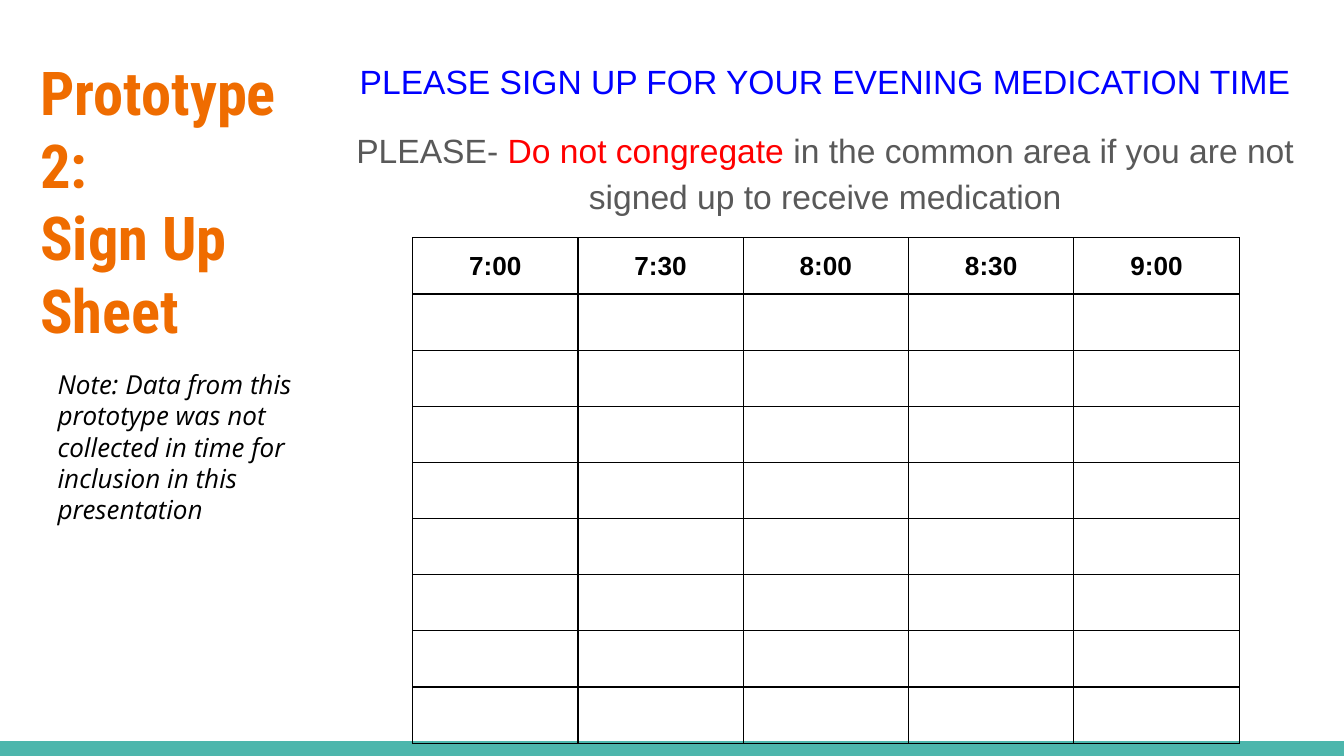
from typing import NamedTuple, Optional

from lxml import etree
from pptx import Presentation
from pptx import util as u
from pptx.dml.color import RGBColor
from pptx.enum import shapes, text
from pptx.oxml import ns

TEAL = RGBColor(0x4D, 0xB6, 0xAC)
ORANGE = RGBColor(0xEF, 0x6C, 0x00)
BLUE = RGBColor(0x00, 0x00, 0xFF)
RED = RGBColor(0xFF, 0x00, 0x00)
GRAY = RGBColor(0x59, 0x59, 0x59)
BLACK = RGBColor(0x00, 0x00, 0x00)

PAGE_WIDTH = 10
PAGE_HEIGHT = PAGE_WIDTH * 9 / 16
BAND_HEIGHT = 0.11

TIMES = ["7:00", "7:30", "8:00", "8:30", "9:00"]
ROW_COUNT = 9
COLUMN_WIDTH = 1.23
TABLE_HEIGHT = 3.76


class Place(NamedTuple):
    left: float
    top: float
    width: float
    height: float

    def lengths(self) -> list:
        return [u.Inches(value) for value in self]


class Span(NamedTuple):
    words: str
    color: RGBColor


TITLE = [[Span("Prototype 2:", ORANGE)], [Span("Sign Up Sheet", ORANGE)]]
INSTRUCTIONS = [
    [Span("PLEASE SIGN UP FOR YOUR EVENING MEDICATION TIME", BLUE)],
    [
        Span("PLEASE- ", GRAY),
        Span("Do not congregate", RED),
        Span(" in the common area if you are not signed up to receive medication", GRAY),
    ],
]
NOTE = [[Span("Note: Data from this prototype was not collected in time "
              "for inclusion in this presentation", BLACK)]]


def write(frame, paragraphs: list, *, font: str, size: float,
          bold: bool = False, italic: bool = False,
          align=text.PP_ALIGN.LEFT, line_spacing: float = 1.0,
          gap: float = 0) -> None:
    """Fill a text frame; gap is the space in points between paragraphs."""
    for index, spans in enumerate(paragraphs):
        para = frame.add_paragraph() if index else frame.paragraphs[0]
        para.alignment = align
        para.line_spacing = line_spacing
        para.space_before = u.Pt(gap if index else 0)
        for span in spans:
            run = para.add_run()
            run.text = span.words
            run.font.name = font
            run.font.size = u.Pt(size)
            run.font.bold = bold
            run.font.italic = italic
            run.font.color.rgb = span.color


def prepare(box, place: Optional[Place] = None):
    """Move a text shape and give its frame even insets and top alignment."""
    if place:
        box.left, box.top, box.width, box.height = place.lengths()
    frame = box.text_frame
    frame.word_wrap = True
    frame.auto_size = text.MSO_AUTO_SIZE.NONE
    frame.vertical_anchor = text.MSO_ANCHOR.TOP
    frame.margin_left = frame.margin_right = u.Inches(0.1)
    frame.margin_top = frame.margin_bottom = u.Inches(0.1)
    return frame


def remove_bullets(frame) -> None:
    for para in frame.paragraphs:
        properties = para._p.get_or_add_pPr()
        properties.set("marL", "0")
        properties.set("indent", "0")
        etree.SubElement(properties, ns.qn("a:buNone"))


def add_borders(cell, color: RGBColor, width: float) -> None:
    properties = cell._tc.get_or_add_tcPr()
    for index, side in enumerate(("lnL", "lnR", "lnT", "lnB")):
        line = etree.Element(ns.qn(f"a:{side}"), w=str(u.Pt(width)))
        fill = etree.SubElement(line, ns.qn("a:solidFill"))
        etree.SubElement(fill, ns.qn("a:srgbClr"), val=str(color))
        properties.insert(index, line)


def add_sign_up_table(page, left: float, top: float) -> None:
    place = Place(left, top, COLUMN_WIDTH * len(TIMES), TABLE_HEIGHT)
    table = page.shapes.add_table(ROW_COUNT, len(TIMES), *place.lengths()).table
    for column in table.columns:
        column.width = u.Inches(COLUMN_WIDTH)
    for row in table.rows:
        row.height = u.Inches(TABLE_HEIGHT / ROW_COUNT)
    for cell in table.iter_cells():
        cell.fill.background()
        cell.vertical_anchor = text.MSO_ANCHOR.MIDDLE
        add_borders(cell, BLACK, 0.75)
    for column, time in enumerate(TIMES):
        write(table.cell(0, column).text_frame, [[Span(time, BLACK)]],
              font="Arial", size=14, bold=True, align=text.PP_ALIGN.CENTER)


def add_footer_band(page) -> None:
    place = Place(0, PAGE_HEIGHT - BAND_HEIGHT, PAGE_WIDTH, BAND_HEIGHT)
    band = page.shapes.add_shape(shapes.MSO_SHAPE.RECTANGLE, *place.lengths())
    band.shadow.inherit = False
    band.fill.solid()
    band.fill.fore_color.rgb = TEAL
    band.line.fill.background()


def main() -> None:
    deck = Presentation()
    deck.slide_width = u.Inches(PAGE_WIDTH)
    deck.slide_height = u.Inches(PAGE_HEIGHT)
    page = deck.slides.add_slide(deck.slide_layouts[1])

    add_footer_band(page)

    title = prepare(page.shapes.title, Place(0.2, 0.31, 2.33, 1.46))
    write(title, TITLE, font="Roboto Condensed", size=32.4, bold=True)

    body = prepare(page.placeholders[1], Place(2.53, 0.31, 7.22, 3.17))
    write(body, INSTRUCTIONS, font="Arial", size=18,
          align=text.PP_ALIGN.CENTER, line_spacing=1.15, gap=12)
    remove_bullets(body)

    add_sign_up_table(page, 3.07, 1.77)

    note = prepare(page.shapes.add_textbox(*Place(0.33, 2.64, 2.05, 1.38).lengths()))
    write(note, NOTE, font="Open Sans", size=14, italic=True)

    deck.save("out.pptx")


if __name__ == "__main__":
    main()
